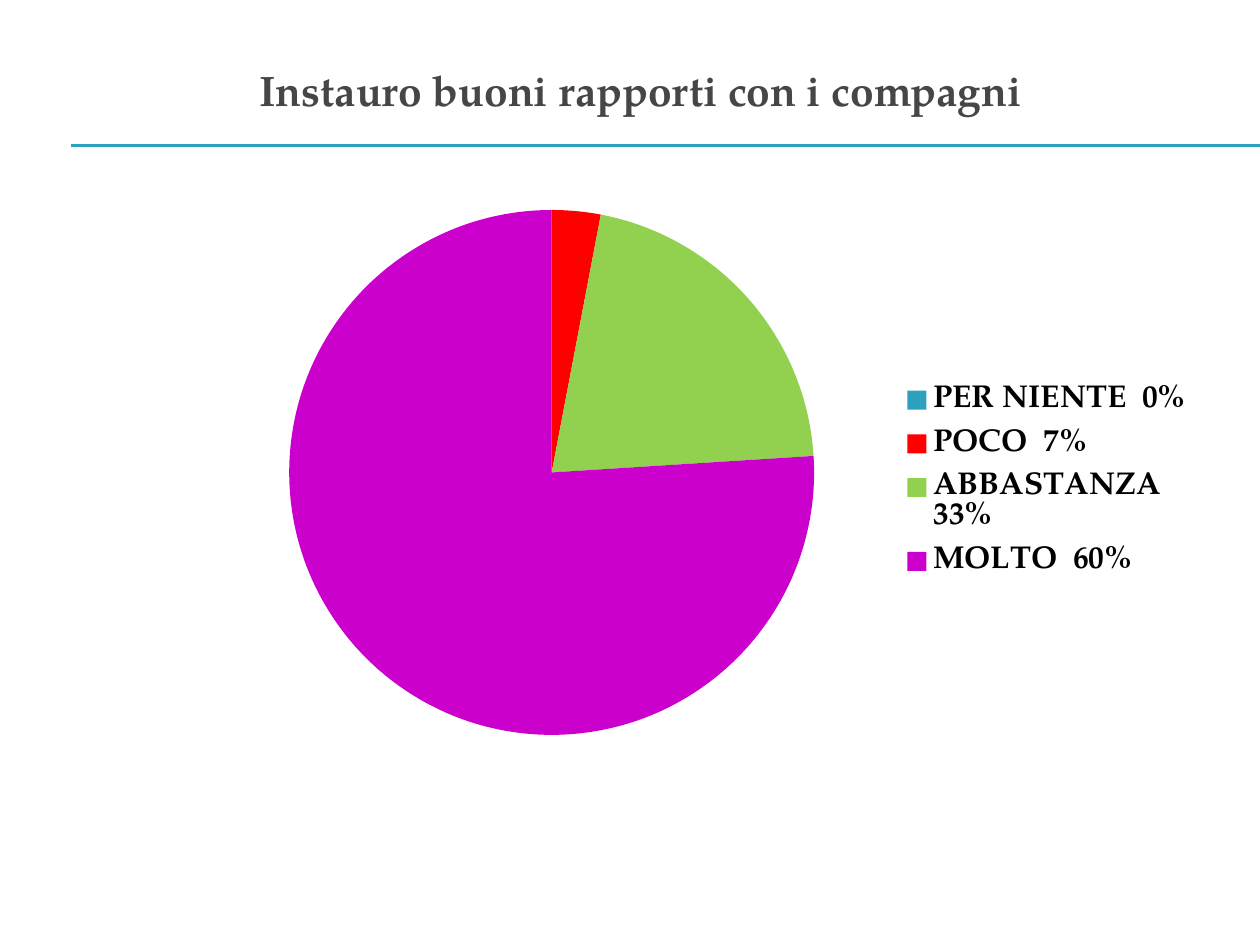
import pptx
import pptx.util
import pptx.chart.data
import pptx.dml.color
import pptx.enum.chart
import pptx.enum.shapes
import pptx.enum.text
import pptx.oxml
import pptx.oxml.ns

Pt = pptx.util.Pt
FACE = "TeX Gyre Pagella"
SLICES = [
    ("PER NIENTE  0%", 0, "2DA2BF"),
    ("POCO  7%", 3, "FF0000"),
    ("ABBASTANZA   33%", 21, "92D050"),
    ("MOLTO  60%", 76, "CC00CC"),
]


def paint(tint, code):
    """Set a fill or a font colour from a hex string."""
    if hasattr(tint, "solid"):
        tint.solid()
        tint = tint.fore_color
    tint.rgb = pptx.dml.color.RGBColor.from_string(code)


def style(font, size, code, bold=True):
    font.name, font.size, font.bold = FACE, Pt(size), bold
    paint(font.color, code)


def add_title(slide, left, top, width, height):
    title = slide.shapes.title
    title.left, title.top = Pt(left), Pt(top)
    title.width, title.height = Pt(width), Pt(height)
    frame = title.text_frame
    frame.text = "Instauro buoni rapporti con i compagni"
    frame.word_wrap = True
    frame.auto_size = pptx.enum.text.MSO_AUTO_SIZE.NONE
    frame.vertical_anchor = pptx.enum.text.MSO_ANCHOR.MIDDLE
    # The text sits in the upper part of its box
    frame.margin_top, frame.margin_bottom = 0, Pt(36)
    line = frame.paragraphs[0]
    line.alignment = pptx.enum.text.PP_ALIGN.CENTER
    style(line.runs[0].font, 24.3, "464646")


def add_rule(slide, left, top, width):
    """Draw two fine lines, one just under the other."""
    for y in (top, top + 0.7):
        rule = slide.shapes.add_connector(
            pptx.enum.shapes.MSO_CONNECTOR.STRAIGHT,
            Pt(left), Pt(y), Pt(left + width), Pt(y))
        rule.line.width = Pt(0.75)
        paint(rule.line.fill, "2DA2BF")
        props = rule.line.fill._xPr.getparent()
        props.append(pptx.oxml.parse_xml(
            "<a:effectLst %s/>" % pptx.oxml.ns.nsdecls("a")))


def set_layout(part, after, x, y, w, h, inner=False):
    """Place a chart part by fractions of the chart's size."""
    for old in part.findall(pptx.oxml.ns.qn("c:layout")):
        part.remove(old)
    target = '<c:layoutTarget val="inner"/>' if inner else ""
    modes = '<c:xMode val="edge"/><c:yMode val="edge"/>'
    sizes = "".join('<c:%s val="%s"/>' % pair
                    for pair in zip("xywh", (x, y, w, h)))
    node = pptx.oxml.parse_xml(
        "<c:layout %s><c:manualLayout>%s%s%s</c:manualLayout></c:layout>"
        % (pptx.oxml.ns.nsdecls("c"), target, modes, sizes))
    if after is None:
        part.insert(0, node)
    else:
        after.addnext(node)


def add_pie(slide, left, top, width, height):
    data = pptx.chart.data.CategoryChartData()
    data.categories = [name for name, _, _ in SLICES]
    data.add_series("Series 1", [value for _, value, _ in SLICES])
    chart = slide.shapes.add_chart(
        pptx.enum.chart.XL_CHART_TYPE.PIE,
        Pt(left), Pt(top), Pt(width), Pt(height), data).chart
    chart.has_title = False
    style(chart.font, 18, "000000", False)

    # Slices
    plot = chart.plots[0]
    plot.vary_by_categories = True
    for i, (_, _, code) in enumerate(SLICES):
        paint(plot.series[0].points[i].format.fill, code)
    area = plot._element.getparent()
    set_layout(area, None, 0.08, 0.03, 0.53, 0.94, inner=True)

    # Legend
    chart.has_legend = True
    legend = chart.legend
    legend.position = pptx.enum.chart.XL_LEGEND_POSITION.RIGHT
    legend.include_in_layout = False
    style(legend.font, 18, "000000")
    key = legend._element
    set_layout(key, key.find(pptx.oxml.ns.qn("c:legendPos")),
               0.69, 0.32, 0.31, 0.39)


def main():
    deck = pptx.Presentation()
    deck.slide_width, deck.slide_height = Pt(720), Pt(540)
    slide = deck.slides.add_slide(deck.slide_layouts[5])
    add_rule(slide, 40.5, 82.8, 679.5)
    add_title(slide, 24, 36, 684, 66)
    add_pie(slide, 120, 110, 566, 320)
    deck.save("out.pptx")


if __name__ == "__main__":
    main()
